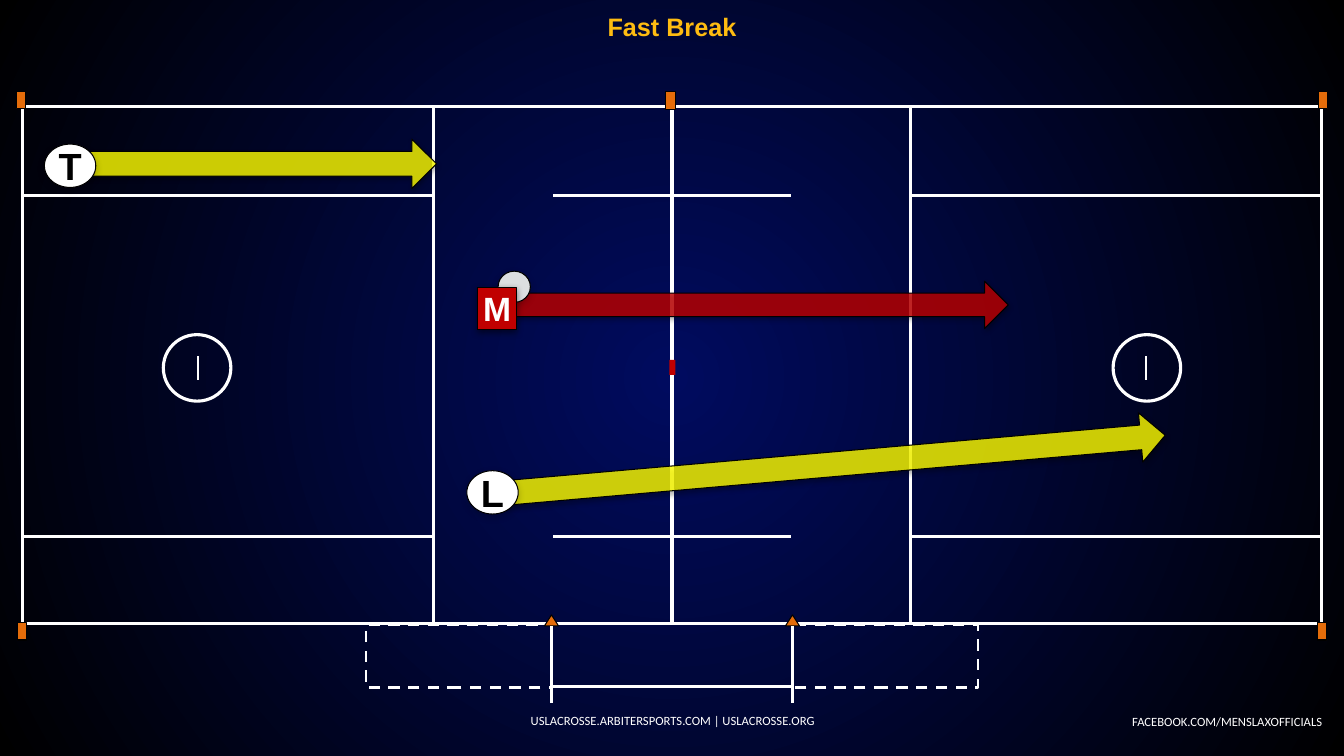
from pptx import Presentation
from pptx.dml.color import RGBColor
from pptx.enum.dml import MSO_LINE
from pptx.enum.shapes import MSO_CONNECTOR, MSO_SHAPE
from pptx.enum.text import MSO_ANCHOR, PP_ALIGN
from pptx.oxml import parse_xml
from pptx.oxml.ns import nsdecls
from pptx.util import Inches, Pt

HUE = {
    "navy": "000B5F", "black": "000000", "white": "FFFFFF", "gold": "FEBC11",
    "cone": "E46C0A", "red": "C00000", "yellow": "FFFF00", "ball": "DCDEE0",
}
RGB = {name: RGBColor.from_string(code) for name, code in HUE.items()}
UNIT = Inches(0.01)
WIDE, HIGH = 1333, 750
MID = WIDE / 2
EDGE, BOX, GATE = 22, 430, 547
TOP, WING, LOW, BASE, BENCH = 106, 194, 532, 619, 681

deck = Presentation()
deck.slide_width, deck.slide_height = WIDE * UNIT, HIGH * UNIT
slide = deck.slides.add_slide(deck.slide_layouts[6])
shapes = slide.shapes

back = slide.background.fill
back.gradient()
for stop, name, place in zip(back.gradient_stops, ("navy", "black"), (0, 1)):
    stop.color.rgb, stop.position = RGB[name], place
grad = slide.element.xpath(".//p:bg//a:gradFill")[0]
for lin in grad.xpath("./a:lin"):
    grad.remove(lin)
grad.append(parse_xml(
    f'<a:path {nsdecls("a")} path="circle">'
    '<a:fillToRect l="50000" t="50000" r="50000" b="50000"/></a:path>'))


def paint(shape, fill=None, line="black", width=0.75, shade=None, clear=None):
    shape.shadow.inherit = False
    if fill:
        shape.fill.solid()
        shape.fill.fore_color.rgb = RGB[fill]
    else:
        shape.fill.background()
    if line:
        shape.line.color.rgb, shape.line.width = RGB[line], Pt(width)
    else:
        shape.line.fill.background()
    if clear:
        tint = shape.element.xpath("./p:spPr/a:solidFill/a:srgbClr")[0]
        tint.append(parse_xml(f'<a:alpha {nsdecls("a")} val="{clear * 1000}"/>'))
    if shade:
        alpha, blur, dist = shade
        shape.element.xpath("./p:spPr/a:effectLst")[0].append(parse_xml(
            f'<a:outerShdw {nsdecls("a")} blurRad="{Pt(blur)}" dist="{Pt(dist)}" '
            'dir="5400000" algn="t" rotWithShape="0"><a:srgbClr val="000000">'
            f'<a:alpha val="{alpha * 1000}"/></a:srgbClr></a:outerShdw>'))
    return shape


def write(shape, text, size, color, face="Arial", bold=True, align=PP_ALIGN.CENTER,
          inset=(10, 5), wrap=True):
    frame = shape.text_frame
    across, down = (gap * UNIT for gap in inset)
    look = {"margin_left": across, "margin_right": across, "margin_top": down,
            "margin_bottom": down, "vertical_anchor": MSO_ANCHOR.MIDDLE, "word_wrap": wrap}
    for key, val in look.items():
        setattr(frame, key, val)
    para = frame.paragraphs[0]
    para.alignment = align
    run = para.add_run()
    run.text = text
    for key, val in {"name": face, "size": Pt(size), "bold": bold}.items():
        setattr(run.font, key, val)
    run.font.color.rgb = RGB[color]


chalk = {"line": "white", "width": 2.25}
cone = {"fill": "cone"}
bench = {"line": "white", "width": 2}
marks = [
    (MSO_SHAPE.RECTANGLE, BOX, TOP, MID - BOX, BASE - TOP, chalk),
    (MSO_SHAPE.RECTANGLE, EDGE, TOP, BOX - EDGE, WING - TOP, chalk),
    (MSO_SHAPE.RECTANGLE, EDGE, LOW, BOX - EDGE, BASE - LOW, chalk),
    (MSO_SHAPE.RECTANGLE, 16, 91, 9, 17, cone),
    (MSO_SHAPE.RECTANGLE, 17, 618, 9, 17, cone),
    (MSO_SHAPE.RECTANGLE, 363, 620, 184, 62, bench),
    (MSO_SHAPE.OVAL, 162, 332, 67, 66, chalk),
    (MSO_SHAPE.RECTANGLE, EDGE, WING, BOX - EDGE, LOW - WING, chalk),
]
lines = [
    (196, 377, 196, 353, 1.5),
    (GATE, 697, GATE, 621, 2.25),
    (MID, LOW, GATE + 1, LOW, 2.25),
    (MID, WING, GATE + 1, WING, 2.25),
    (MID, BENCH, GATE + 1, BENCH, 2.25),
]
for flip in (False, True):
    for kind, left, top, wide, high, style in marks:
        start = WIDE - left - wide if flip else left
        mark = shapes.add_shape(
            kind, *(int(n * UNIT) for n in (start, top, wide, high)))
        paint(mark, **style)
        if style is bench:
            mark.line.dash_style = MSO_LINE.DASH
    tip = WIDE - GATE if flip else GATE
    pen = shapes.build_freeform(tip, 610, scale=UNIT)
    pen.add_line_segments([(tip + 7, 621), (tip - 7, 621)], close=True)
    paint(pen.convert_to_shape(), **cone)
    for x1, y1, x2, y2, width in lines:
        if flip:
            x1, x2 = WIDE - x1, WIDE - x2
        line = shapes.add_connector(
            MSO_CONNECTOR.STRAIGHT, *(int(n * UNIT) for n in (x1, y1, x2, y2)))
        line.line.color.rgb, line.line.width = RGB["white"], Pt(width)
        line.element.spPr.append(parse_xml(f'<a:effectLst {nsdecls("a")}/>'))

for box, style in [((660, 91, 10, 18), cone),
                   ((664, 357, 6, 15), {"fill": "red", "line": None})]:
    paint(shapes.add_shape(MSO_SHAPE.RECTANGLE, *(n * UNIT for n in box)), **style)

small = {"size": 9, "color": "white", "face": "Calibri", "bold": False}
for text, box, style in [
    ("FACEBOOK.COM/MENSLAXOFFICIALS", (1109, 703, 212, 25),
     {**small, "align": PP_ALIGN.RIGHT, "wrap": False}),
    ("Fast Break", (0, 5, WIDE, 42), {"size": 18, "color": "gold"}),
    ("USLACROSSE.ARBITERSPORTS.COM | USLACROSSE.ORG", (456, 695, 422, 40), small),
]:
    write(shapes.add_textbox(*(n * UNIT for n in box)), text, **style)

for box, fill, turn in [((498, 279, 502, 47), "red", 0),
                        ((73, 138, 360, 49), "yellow", 0),
                        ((499, 436, 658, 49), "yellow", 355)]:
    arrow = shapes.add_shape(MSO_SHAPE.RIGHT_ARROW, *(n * UNIT for n in box))
    paint(arrow, fill, shade=(35, 3.1, 1.8), clear=80).rotation = turn

for kind, box, fill, alpha, text, size, color, pad in [
    (MSO_SHAPE.OVAL, (44, 143, 51, 43), "white", 20, "T", 27, "black", 7),
    (MSO_SHAPE.OVAL, (463, 467, 51, 43), "white", 20, "L", 27, "black", 7),
    (MSO_SHAPE.OVAL, (494, 269, 32, 31), "ball", 20, "", 0, "", 0),
    (MSO_SHAPE.RECTANGLE, (474, 285, 38, 42), "red", 50, "M", 24, "white", 6),
]:
    badge = shapes.add_shape(kind, *(n * UNIT for n in box))
    paint(badge, fill, shade=(alpha, 5, 2))
    if text:
        write(badge, text, size, color, inset=(pad, pad), wrap=kind == MSO_SHAPE.OVAL and False)

deck.save("out.pptx")
